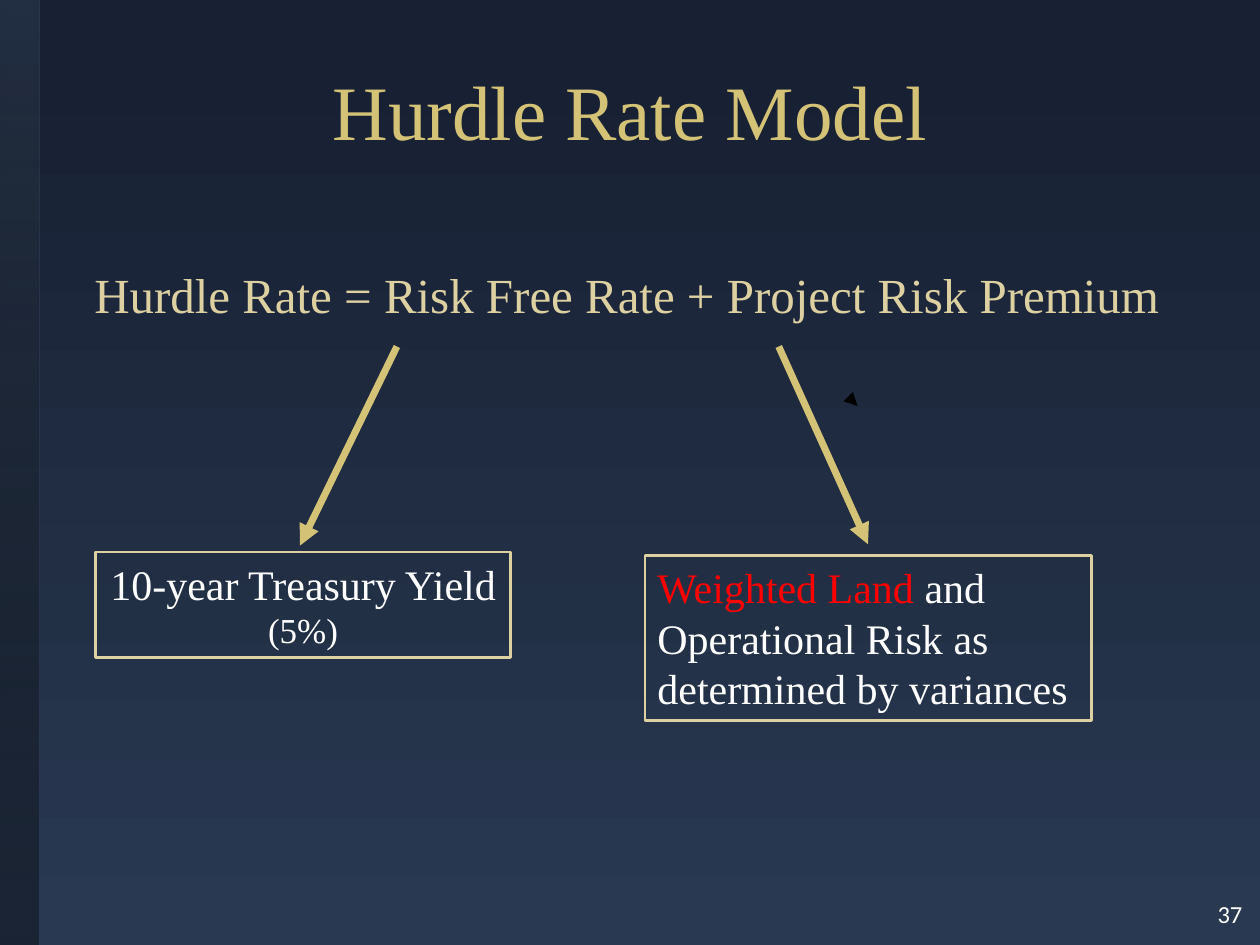
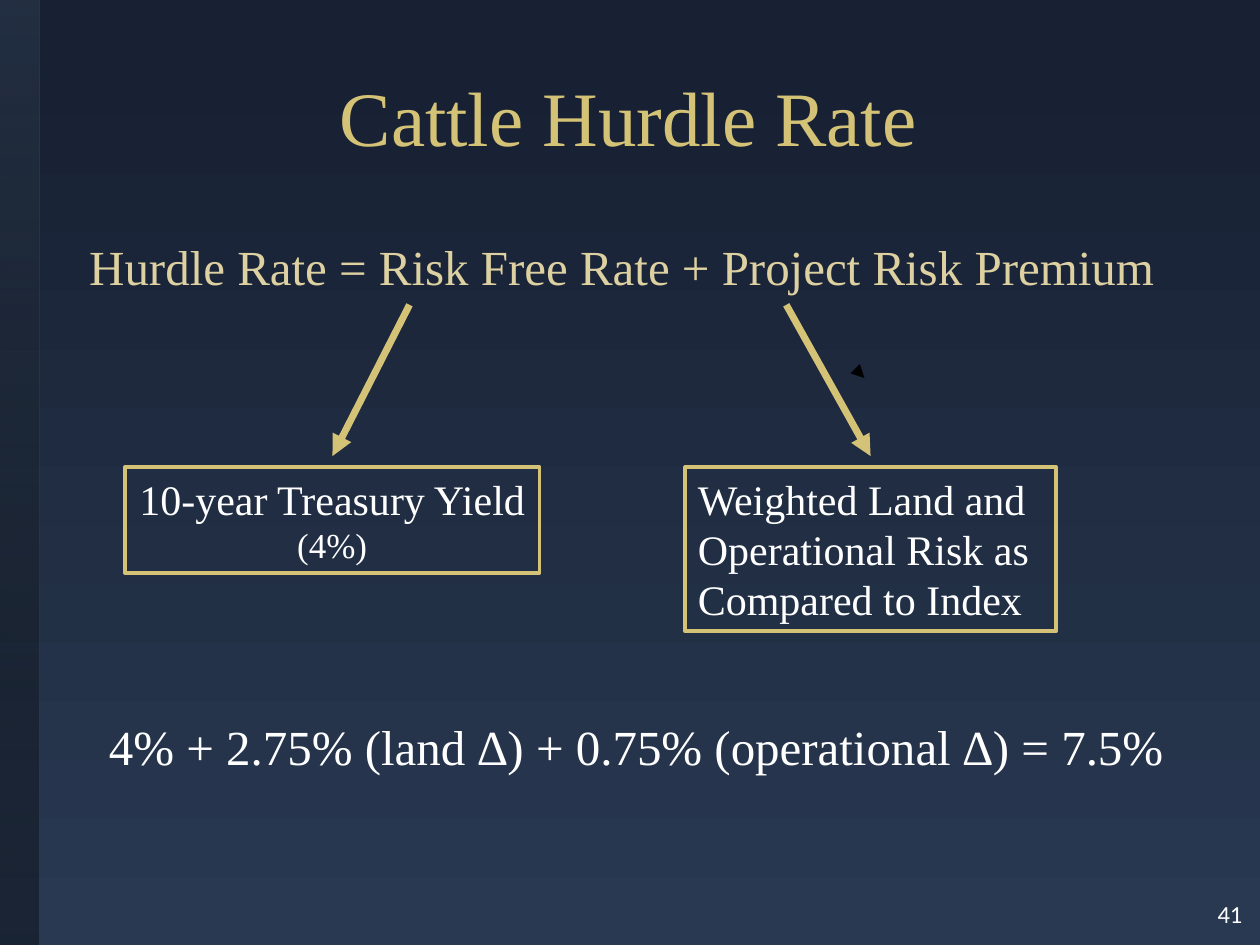
from lxml import etree
from pptx import Presentation
from pptx.dml.color import RGBColor
from pptx.enum.shapes import MSO_CONNECTOR, MSO_SHAPE
from pptx.enum.text import MSO_ANCHOR, PP_ALIGN
from pptx.oxml.ns import qn
from pptx.util import Pt

LEFT, CENTER, RIGHT = PP_ALIGN.LEFT, PP_ALIGN.CENTER, PP_ALIGN.RIGHT
TOP, MIDDLE = MSO_ANCHOR.TOP, MSO_ANCHOR.MIDDLE
STRAIGHT, RECTANGLE = MSO_CONNECTOR.STRAIGHT, MSO_SHAPE.RECTANGLE

PAGE_WIDTH, PAGE_HEIGHT = 720, 540
BAND_WIDTH = 22.3
BODY_FONT, NUMBER_FONT = "Times New Roman", "Calibri"
COLORS = {
    "night": "182033", "dusk": "283951",
    "band_top": "5E7EA4", "band_bottom": "343F56",
    "gold": "D4C276", "sand": "DDD0A1",
    "white": "FFFFFF", "red": "FF0000", "black": "000000",
}
FORMULA = "Hurdle Rate = Risk Free Rate + Project Risk Premium"


def rgb(name):
    return RGBColor.from_string(COLORS[name])


def set_gradient(fill, stops):
    """Fill from top to bottom; stops are (position, colour) pairs."""
    fill.gradient()
    fill.gradient_angle = 270
    for stop, (position, color) in zip(fill.gradient_stops, stops):
        stop.position = position
        stop.color.rgb = rgb(color)


def set_opacity(shape, percents):
    """Give each fill colour of the shape its opacity, in order."""
    for color, percent in zip(list(shape.element.spPr.iter(qn("a:srgbClr"))), percents):
        etree.SubElement(color, qn("a:alpha"), val=str(percent * 1000))


def add_band(page):
    band = page.shapes.add_shape(RECTANGLE, 0, 0, Pt(BAND_WIDTH), Pt(PAGE_HEIGHT))
    band.shadow.inherit = False
    band.line.fill.background()
    return band


def add_text(page, area, paragraphs, align=LEFT, anchor=TOP, wrap=True, font=BODY_FONT):
    """Each paragraph is a list of (text, size, colour) spans."""
    box = page.shapes.add_textbox(*map(Pt, area))
    frame = box.text_frame
    frame.word_wrap = wrap
    frame.vertical_anchor = anchor
    for index, spans in enumerate(paragraphs):
        para = frame.add_paragraph() if index else frame.paragraphs[0]
        para.alignment = align
        for text, size, color in spans:
            span = para.add_run()
            span.text = text
            for name, value in {"name": font, "size": Pt(size)}.items():
                setattr(span.font, name, value)
            span.font.color.rgb = rgb(color)
    return box


def add_framed_text(page, area, paragraphs, color, weight, **layout):
    box = add_text(page, area, paragraphs, **layout)
    box.line.color.rgb = rgb(color)
    box.line.width = Pt(weight)


def add_treasury_box(page, left, top, rate, color, weight):
    paragraphs = [[("10-year Treasury Yield", 24, "white")], [(rate, 20, "white")]]
    add_framed_text(page, (left, top, 237, 60.5), paragraphs, color, weight,
                    align=CENTER, wrap=False)


def add_arrow(page, start, end, color="gold", weight=4):
    arrow = page.shapes.add_connector(STRAIGHT, *map(Pt, start + end))
    arrow.line.color.rgb = rgb(color)
    arrow.line.width = Pt(weight)
    etree.SubElement(arrow.line._get_or_add_ln(), qn("a:tailEnd"), type="triangle")
    etree.SubElement(arrow.element.spPr, qn("a:effectLst"))


def add_arrow_tip(page, x, y):
    """A black arrowhead with next to no shaft, pointing down right."""
    add_arrow(page, (x - 0.1, y - 0.1), (x, y), "black", 2.5)


def add_page(deck, title, title_area, formula_area, number):
    page = deck.slides.add_slide(deck.slide_layouts[6])
    set_gradient(page.background.fill, [(0.06, "night"), (0.99, "dusk")])

    shade = add_band(page)
    shade.fill.solid()
    shade.fill.fore_color.rgb = rgb("black")
    set_opacity(shade, [39])
    glow = add_band(page)
    set_gradient(glow.fill, [(0, "band_top"), (0.99, "band_bottom")])
    set_opacity(glow, [26, 8])

    add_text(page, (668, 510, 49, 30), [[(number, 14, "white")]],
             align=RIGHT, font=NUMBER_FONT)
    add_text(page, title_area, [[(title, 44, "gold")]], align=CENTER, anchor=MIDDLE)
    add_text(page, formula_area, [[(FORMULA, 28, "sand")]])
    return page


def add_model_page(deck):
    page = add_page(deck, "Hurdle Rate Model", (36, 12.2, 648, 101.5),
                    (46.8, 147.6, 626.4, 41), "37")
    add_treasury_box(page, 54.7, 315.4, "(5%)", "sand", 1.5)
    risk = [("Weighted Land ", 24, "red"),
            ("and Operational Risk as determined by variances", 24, "white")]
    add_framed_text(page, (368.6, 317.5, 255, 94.3), [risk], "sand", 1.5)
    add_arrow(page, (226.8, 198), (171.4, 311.8))
    add_arrow(page, (445, 198), (496, 311))
    add_arrow_tip(page, 490, 232)


def add_cattle_page(deck):
    page = add_page(deck, "Cattle Hurdle Rate", (35.3, 15.1, 648, 101.5),
                    (43.9, 131.8, 643, 41), "41")
    add_treasury_box(page, 71.3, 267, "(4%)", "gold", 2.25)
    risk = [("Weighted Land and Operational Risk as Compared to Index", 24, "white")]
    add_framed_text(page, (391.7, 266.8, 211.7, 94), [risk], "gold", 2.25)
    add_arrow_tip(page, 494, 216)
    result = "4% + 2.75% (land ∆) + 0.75% (operational ∆) = 7.5%"
    add_text(page, (55.2, 406, 626.4, 41), [[(result, 28, "white")]])
    add_arrow(page, (234, 174.2), (190, 260.6))
    add_arrow(page, (449.3, 174.2), (497.5, 260.6))


def main():
    deck = Presentation()
    deck.slide_width, deck.slide_height = Pt(PAGE_WIDTH), Pt(PAGE_HEIGHT)
    add_model_page(deck)
    add_cattle_page(deck)
    deck.save("out.pptx")


if __name__ == "__main__":
    main()
